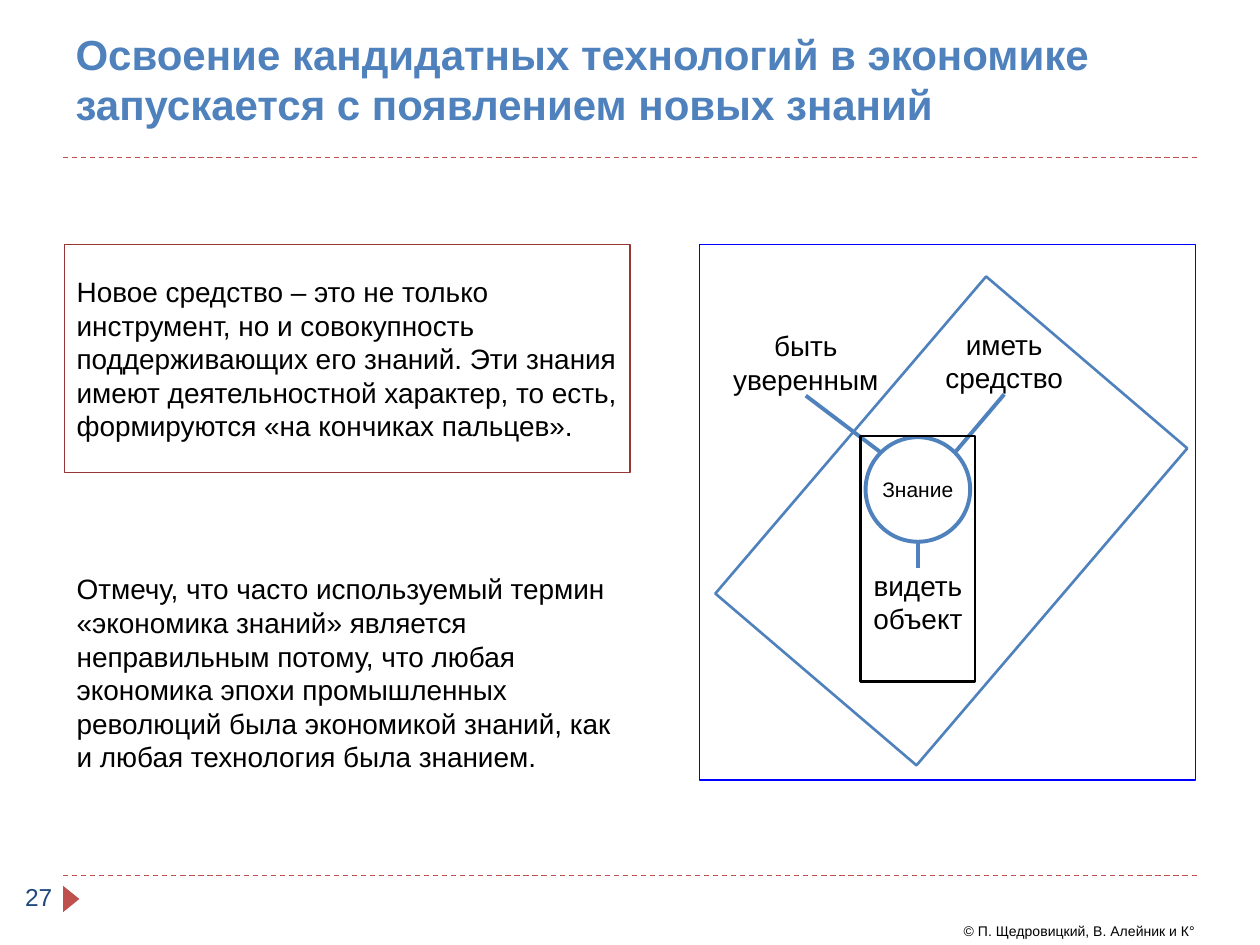
"""Build a slide on how new knowledge launches candidate technologies."""
import math
from collections import namedtuple

from lxml import etree
from pptx import Presentation
from pptx import util as u
from pptx.dml.color import RGBColor
from pptx.enum import dml, shapes, text
from pptx.oxml import ns

BLUE = RGBColor(0x4F, 0x81, 0xBD)
PURE_BLUE = RGBColor(0x00, 0x00, 0xFF)
NAVY = RGBColor(0x1F, 0x49, 0x7D)
RED = RGBColor(0xC0, 0x50, 0x4D)
DARK_RED = RGBColor(0x95, 0x37, 0x35)
BLACK = RGBColor(0x00, 0x00, 0x00)
WHITE = RGBColor(0xFF, 0xFF, 0xFF)

COLUMNS, ROWS = 100, 75
CELL = u.Inches(0.1)
Box = namedtuple("Box", "x y w h")
MIDDLE, TOP, BOTTOM = (text.MSO_ANCHOR.MIDDLE, text.MSO_ANCHOR.TOP,
                       text.MSO_ANCHOR.BOTTOM)
LEFT, CENTER = text.PP_ALIGN.LEFT, text.PP_ALIGN.CENTER


def cells(*values):
    """Turn grid counts into lengths."""
    return [round(v * CELL) for v in values]


def within(box, x, y, w, h):
    """Return a box placed relative to another one."""
    return Box(box.x + x, box.y + y, w, h)


def write(sp, words, size, color=BLACK, bold=False, align=LEFT, anchor=TOP,
          insets=(1, 0.5, 1, 0.5)):
    """Fill a shape with one formatted paragraph."""
    tf = sp.text_frame
    tf.word_wrap = True
    tf.auto_size = text.MSO_AUTO_SIZE.NONE
    tf.vertical_anchor = anchor
    (tf.margin_left, tf.margin_top,
     tf.margin_right, tf.margin_bottom) = cells(*insets)
    p = tf.paragraphs[0]
    p.text = words
    p.alignment = align
    p.font.name, p.font.size, p.font.bold = "Arial", u.Pt(size), bold
    p.font.color.rgb = color


def add_text(s, box, words, size, **style):
    """Add a text box."""
    write(s.shapes.add_textbox(*cells(*box)), words, size, **style)


def add_shape(s, kind, box, fill=None, line=None, width=0.75, turn=0):
    """Add a preset shape."""
    sp = s.shapes.add_shape(kind, *cells(*box))
    sp.shadow.inherit = False
    sp.rotation = turn
    if fill is None:
        sp.fill.background()
    else:
        sp.fill.solid()
        sp.fill.fore_color.rgb = fill
    if line is None:
        sp.line.fill.background()
    else:
        sp.line.color.rgb = line
        sp.line.width = u.Pt(width)
    return sp


def add_line(s, start, end, color, width, dash=None):
    """Add a straight line between two grid points."""
    c = s.shapes.add_connector(shapes.MSO_CONNECTOR.STRAIGHT,
                               *cells(*start, *end))
    c.line.color.rgb = color
    c.line.width = u.Pt(width)
    c.line.dash_style = dash
    etree.SubElement(c._element.spPr, ns.qn("a:effectLst"))


def add_header(s, box):
    """Place the title and the rule under it."""
    title = s.shapes.title
    title.left, title.top, title.width, title.height = cells(
        *within(box, 0, 0, 93, box.h))
    write(title, "Освоение кандидатных технологий в экономике "
          "запускается с появлением новых знаний", 24, color=BLUE, bold=True,
          anchor=MIDDLE, insets=(1, 0.5, 0, 0.5))
    bottom = box.y + box.h
    add_line(s, (box.x, bottom), (box.x + box.w, bottom), RED, 0.75,
             dml.MSO_LINE.DASH)


def add_footer(s, box):
    """Place the lower rule, page number, marker and copyright."""
    add_line(s, (box.x, box.y), (box.x + box.w, box.y), RED, 0.75,
             dml.MSO_LINE.DASH)
    add_shape(s, shapes.MSO_SHAPE.ISOSCELES_TRIANGLE,
              within(box, -0.4, 1.2, 2.1, 1.3), fill=RED, turn=90)
    add_text(s, within(box, 70.5, 3.2, 24.2, 2.4),
             "© П. Щедровицкий, В. Алейник и К°", 8)
    add_text(s, within(box, -4, 0, 4.5, 4), "27", 14, color=NAVY)


def add_statements(s, box):
    """Place the framed statement and the remark below it."""
    framed = add_shape(s, shapes.MSO_SHAPE.RECTANGLE,
                       within(box, 0, 0, box.w, 18.1), fill=WHITE,
                       line=DARK_RED)
    write(framed, "Новое средство – это не только инструмент, но и "
          "совокупность поддерживающих его знаний. Эти знания имеют "
          "деятельностной характер, то есть, формируются «на кончиках "
          "пальцев».", 16, anchor=MIDDLE)
    add_text(s, within(box, 0, 25.5, box.w, 17.2),
             "Отмечу, что часто используемый термин «экономика знаний» "
             "является неправильным потому, что любая экономика эпохи "
             "промышленных революций была экономикой знаний, как и любая "
             "технология была знанием.", 16)


def add_diagram(s, box):
    """Draw knowledge as a circle joined to its three labels."""
    rect = shapes.MSO_SHAPE.RECTANGLE
    add_shape(s, rect, box, line=PURE_BLUE)
    circle = within(box, 13.2, 15.3, 8.3, 8.3)
    radius = circle.w / 2
    labels = [
        ("иметь средство", within(box, 19.1, 6.5, 10.2, 5.4), BOTTOM, -45),
        ("быть уверенным", within(box, 2.4, 6.6, 12.1, 5.4), BOTTOM, -135),
        ("видеть объект", within(box, 12.8, 25.7, 9.1, 5.4), TOP, 90),
    ]
    for words, label, anchor, degrees in labels:
        add_text(s, label, words, 16, align=CENTER, anchor=anchor,
                 insets=(0, 0, 0, 0))
        angle = math.radians(degrees)
        rim = (circle.x + radius * (1 + math.cos(angle)),
               circle.y + radius * (1 + math.sin(angle)))
        edge = label.y + (label.h if anchor == BOTTOM else 0)
        add_line(s, rim, (label.x + label.w / 2, edge), BLUE, 2.25)
    knowledge = add_shape(s, shapes.MSO_SHAPE.OVAL, circle, line=BLUE,
                          width=2.25)
    write(knowledge, "Знание", 12, align=CENTER, anchor=MIDDLE,
          insets=(0, 0.5, 0, 0.5))
    add_shape(s, rect, within(box, 12.8, 15.2, 9.1, 19.5), line=BLACK,
              width=1.5)
    add_shape(s, rect, within(box, 9.5, 5.4, 21, 33.1), line=BLUE, width=1.5,
              turn=40.5)


def main():
    """Build and save the slide."""
    prs = Presentation()
    prs.slide_width, prs.slide_height = cells(COLUMNS, ROWS)
    s = prs.slides.add_slide(prs.slide_layouts.get_by_name("Title Only"))
    add_header(s, Box(5, 0, 90, 12.5))
    add_statements(s, Box(5.1, 19.4, 44.9, 42.7))
    add_diagram(s, Box(55.5, 19.4, 39.4, 42.5))
    add_footer(s, Box(5, 69.5, 90, 5.5))
    prs.save("out.pptx")


if __name__ == "__main__":
    main()
